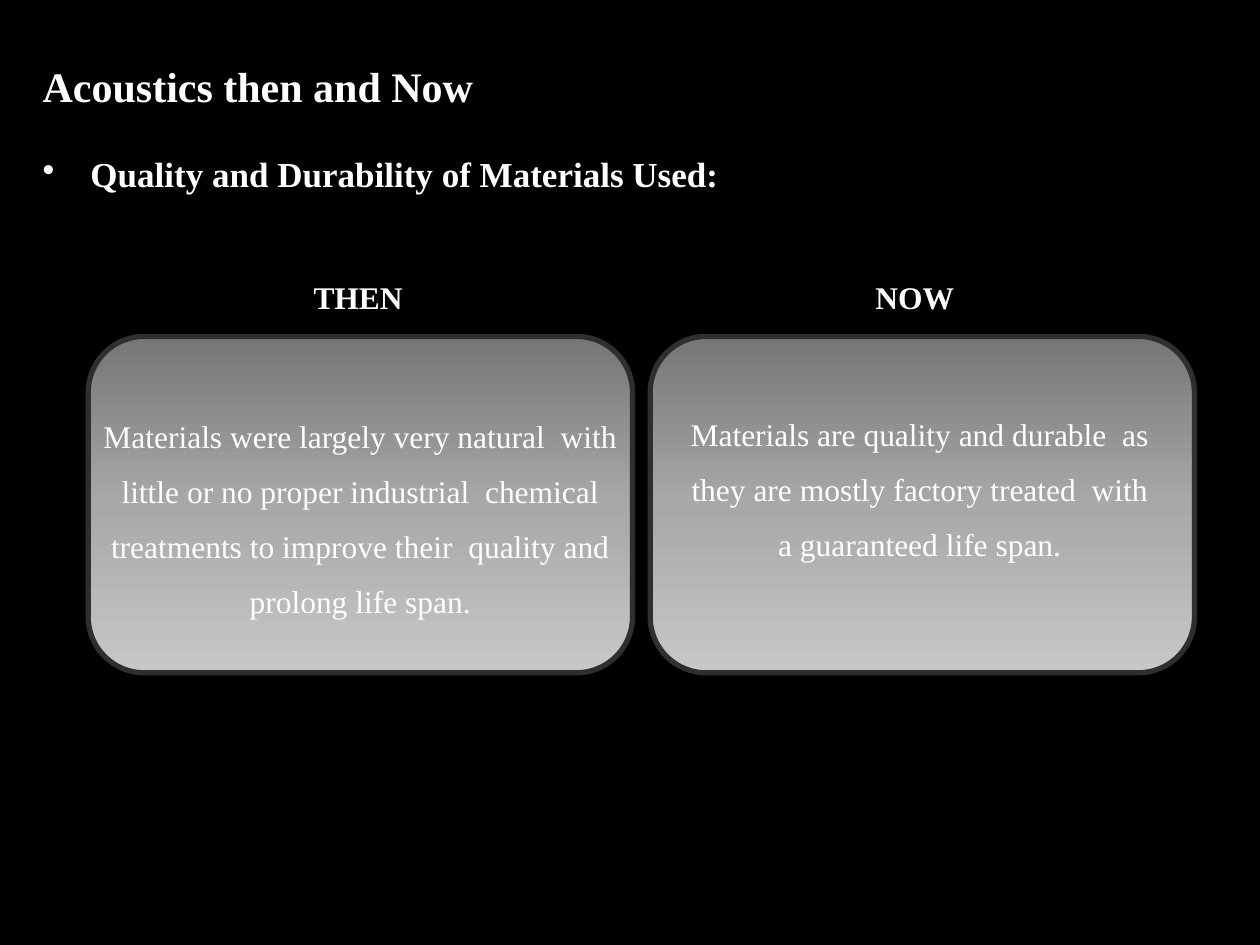
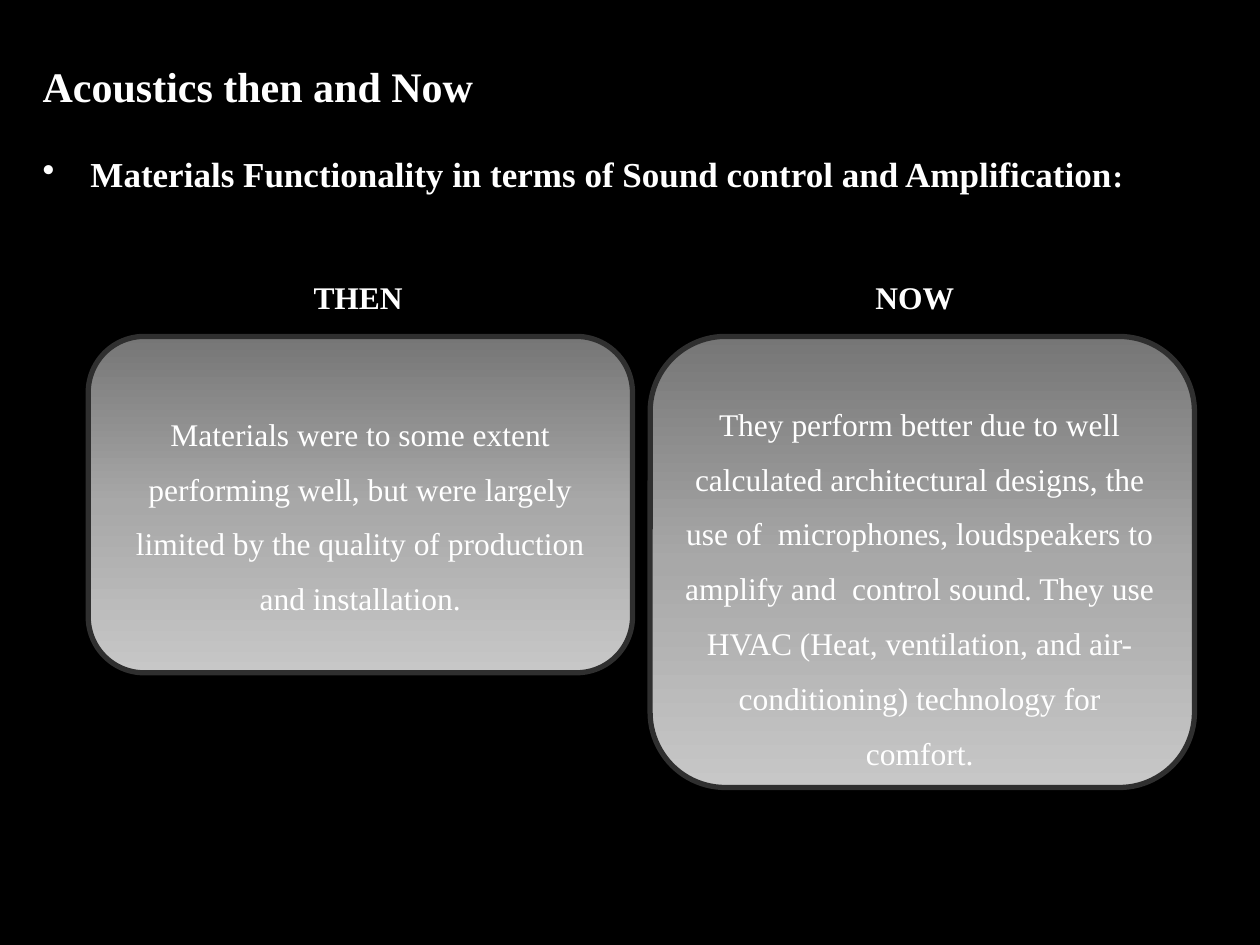
"""Builds two slides that compare acoustics then and now."""
from dataclasses import dataclass

from pptx import Presentation
from pptx.dml.color import RGBColor
from pptx.enum.shapes import MSO_SHAPE
from pptx.enum.text import PP_ALIGN
from pptx.oxml import parse_xml
from pptx.oxml.ns import nsdecls
from pptx.util import Inches, Pt

COLORS = {
    "background": "000000",
    "text": "FFFFFF",
    "outline": "2F2F2F",
    "shade_top": "767676",
    "shade_middle": "A8A8A8",
    "shade_bottom": "C7C7C7",
}
FONT = "Times New Roman"
TITLE = "Acoustics then and Now"
HEADING_FORMAT = {"size": Pt(24), "bold": True}
TOPIC_FORMAT = {"size": Pt(20), "bold": True}
LABEL_FORMAT = {"size": Pt(18), "bold": True}
BODY_FORMAT = {"size": Pt(18), "bold": False}
BODY_SPACING = {"alignment": PP_ALIGN.CENTER, "line_spacing": 1.45}
TOPIC_SPACING = {"alignment": PP_ALIGN.JUSTIFY, "space_before": Pt(24)}
TOPIC_INDENT = 0.38
CARD_TOP, CARD_WIDTH = 2.67, 4.32
LABEL_TOP, LABEL_WIDTH, LABEL_HEIGHT = 2.16, 3, 0.4


@dataclass(frozen=True)
class Column:
    """Position of one side of the comparison."""
    label: str
    label_left: float
    card_left: float
    text_left: float
    text_width: float


@dataclass(frozen=True)
class Card:
    """Wording and measures of one rounded card."""
    text: str
    text_top: float
    text_height: float
    indent: float
    height: float = 2.67
    inset_top: float = 0.05


@dataclass(frozen=True)
class Comparison:
    """Topic of one slide with its two cards."""
    topic: str
    topic_end: str
    end_size: int
    cards: tuple[Card, Card]


COLUMNS = (
    Column("THEN", 2.39, 0.7, 0.63, 4.46),
    Column("NOW", 6.85, 5.16, 5.16, 4.28),
)
COMPARISONS = (
    Comparison("Quality and Durability of Materials Used", ":", 20, (
        Card("Materials were largely very natural  with little or no proper "
             "industrial  chemical treatments to improve their  quality and "
             "prolong life span.", 3.13, 1.8, 0.08),
        Card("Materials are quality and durable  as they are mostly factory "
             "treated  with a guaranteed life span.", 2.61, 1.85, 0.16,
             inset_top=0.55),
    )),
    Comparison("Materials Functionality in terms of Sound control and "
               "Amplification", ":", 18, (
        Card("Materials were to some extent performing well, but were largely "
             "limited by the quality of production and installation.",
             3.11, 1.8, 0.16),
        Card("They perform better due to well calculated architectural "
             "designs, the use of  microphones, loudspeakers to amplify and  "
             "control sound. They use HVAC (Heat, ventilation, and "
             "air-conditioning) technology for comfort.",
             3.03, 3.02, 0.17, height=3.58),
    )),
)


def color(name: str) -> RGBColor:
    """Return a named palette colour."""
    return RGBColor.from_string(COLORS[name])


def apply(target, values: dict) -> None:
    """Set every attribute in a format on the target."""
    for name, value in values.items():
        setattr(target, name, value)


def add_span(para, text: str, values: dict) -> None:
    """Add formatted text to a paragraph."""
    span = para.add_run()
    span.text = text
    apply(span.font, {"name": FONT, **values})
    span.font.color.rgb = color("text")


def add_frame(page, left: float, top: float, width: float, height: float,
              inset_top: float = 0.05):
    """Add a wrapping text box and return its text frame."""
    box = page.shapes.add_textbox(
        Inches(left), Inches(top), Inches(width), Inches(height))
    apply(box.text_frame, {"word_wrap": True, "margin_top": Inches(inset_top)})
    return box.text_frame


def set_indents(para, **indents: float) -> None:
    """Set paragraph margins given in inches."""
    properties = para._p.get_or_add_pPr()
    for name, value in indents.items():
        properties.set(name, str(Inches(value)))


def add_heading(page, comparison: Comparison) -> None:
    """Draw the shared title and the bulleted topic."""
    frame = add_frame(page, 0.24, 0.41, 9.54, 1.18, 0.07)
    title = frame.paragraphs[0]
    title.alignment = PP_ALIGN.JUSTIFY
    add_span(title, TITLE, HEADING_FORMAT)
    topic = frame.add_paragraph()
    apply(topic, TOPIC_SPACING)
    set_indents(topic, marL=TOPIC_INDENT, indent=-TOPIC_INDENT)
    topic._p.get_or_add_pPr().append(
        parse_xml(f'<a:buChar {nsdecls("a")} char="•"/>'))
    add_span(topic, comparison.topic, TOPIC_FORMAT)
    add_span(topic, comparison.topic_end,
             {**TOPIC_FORMAT, "size": Pt(comparison.end_size)})


def shade(box) -> None:
    """Fill a shape with the grey vertical gradient."""
    names = ("shade_top", "shade_middle", "shade_bottom")
    stops = "".join(
        f'<a:gs pos="{index * 50000}"><a:srgbClr val="{COLORS[name]}"/></a:gs>'
        for index, name in enumerate(names))
    gradient = parse_xml(
        f'<a:gradFill {nsdecls("a")} rotWithShape="1"><a:gsLst>{stops}'
        '</a:gsLst><a:lin ang="5400000" scaled="0"/></a:gradFill>')
    box._element.spPr.insert(2, gradient)


def add_card(page, column: Column, card: Card) -> None:
    """Draw one rounded card with its text and label."""
    box = page.shapes.add_shape(
        MSO_SHAPE.ROUNDED_RECTANGLE, Inches(column.card_left),
        Inches(CARD_TOP), Inches(CARD_WIDTH), Inches(card.height))
    shade(box)
    box.shadow.inherit = False
    box.line.color.rgb = color("outline")
    box.line.width = Pt(3)
    frame = add_frame(page, column.text_left, card.text_top,
                      column.text_width, card.text_height, card.inset_top)
    para = frame.paragraphs[0]
    apply(para, BODY_SPACING)
    set_indents(para, marL=card.indent, marR=card.indent, indent=0)
    add_span(para, card.text, BODY_FORMAT)
    label = add_frame(page, column.label_left, LABEL_TOP,
                      LABEL_WIDTH, LABEL_HEIGHT)
    add_span(label.paragraphs[0], column.label, LABEL_FORMAT)


def add_page(deck, comparison: Comparison) -> None:
    """Add one comparison slide."""
    page = deck.slides.add_slide(deck.slide_layouts[6])
    page.background.fill.solid()
    page.background.fill.fore_color.rgb = color("background")
    add_heading(page, comparison)
    for column, card in zip(COLUMNS, comparison.cards):
        add_card(page, column, card)


def main() -> None:
    """Build and save the deck."""
    deck = Presentation()
    apply(deck, {"slide_width": Inches(10), "slide_height": Inches(7.5)})
    for comparison in COMPARISONS:
        add_page(deck, comparison)
    deck.save("out.pptx")


if __name__ == "__main__":
    main()
